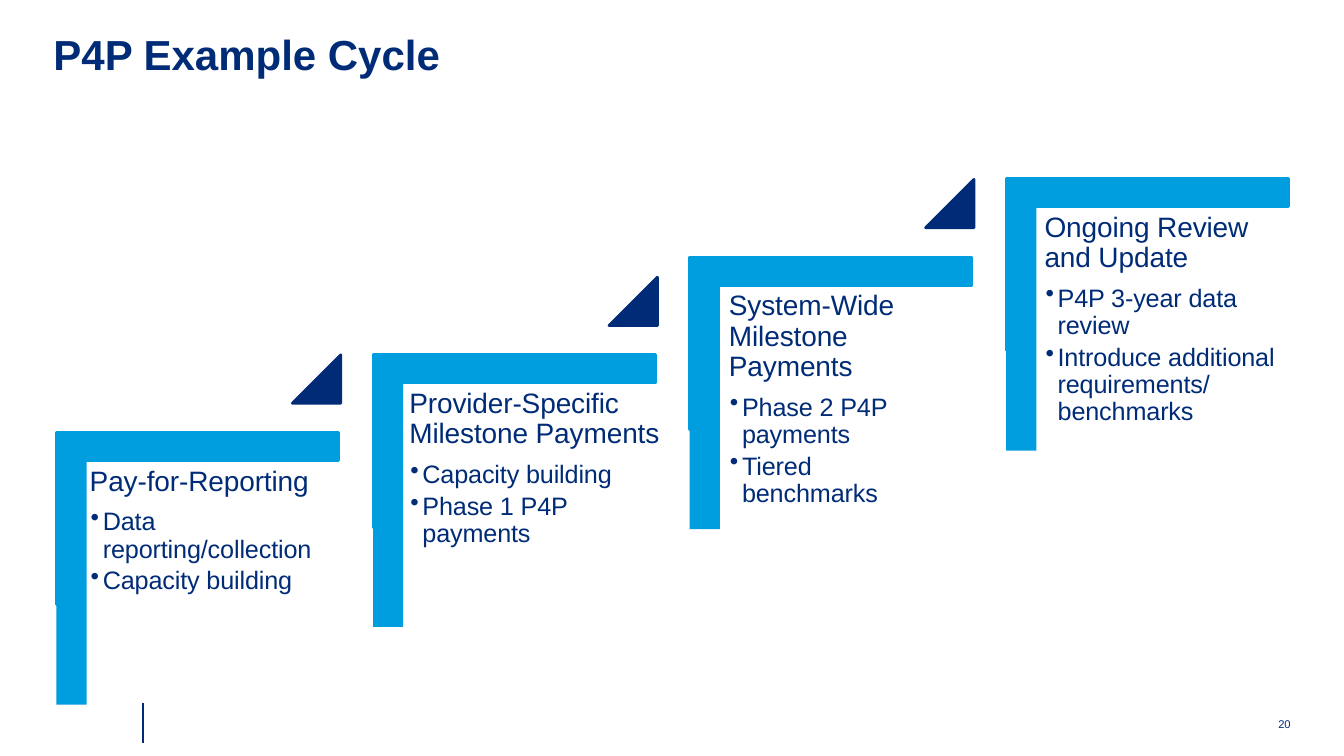
from lxml.etree import SubElement
from pptx import Presentation
from pptx.dml.color import RGBColor
from pptx.enum.shapes import MSO_CONNECTOR, MSO_SHAPE
from pptx.oxml.ns import qn
from pptx.util import Inches, Pt

COLORS = {"navy": "002C77", "sky": "009DDF"}
FONT = "Arial"

STEP_LEFT, STEP_PITCH, STEP_WIDTH = 0.56, 3.14, 2.8
BAR_WIDTH, BAR_HEIGHT = 0.3, 2.7
BEAM_HEIGHT, FRAME_HEIGHT = 0.28, 1.71
TRIANGLE_SIZE = 0.48

# Each step: top, text indent from the step, text width, heading, bullets
STEPS = [
    (4.29, 0.33, 2.3, "Pay-for-Reporting",
     ["Data reporting/collection", "Capacity building"]),
    (3.52, 0.36, 2.6, "Provider-Specific Milestone Payments",
     ["Capacity building", "Phase 1 P4P payments"]),
    (2.55, 0.39, 1.9, "System-Wide Milestone Payments",
     ["Phase 2 P4P payments", "Tiered benchmarks"]),
    (1.77, 0.38, 2.42, "Ongoing Review and Update",
     ["P4P 3-year data review", "Introduce additional requirements/ benchmarks"]),
]


def color(name):
    return RGBColor.from_string(COLORS[name])


def paint(shape, name, line_width=None):
    shape.shadow.inherit = False
    shape.fill.solid()
    shape.fill.fore_color.rgb = color(name)
    if line_width:
        shape.line.color.rgb = color(name)
        shape.line.width = Pt(line_width)
    else:
        shape.line.fill.background()


def add_outline(slide, points, name):
    corners = [(Inches(x), Inches(y)) for x, y in points]
    builder = slide.shapes.build_freeform(*corners[0])
    builder.add_line_segments(corners[1:], close=True)
    paint(builder.convert_to_shape(), name, line_width=2)


def add_text_box(slide, left, top, width, height):
    box = slide.shapes.add_textbox(Inches(left), Inches(top), Inches(width), Inches(height))
    frame = box.text_frame
    frame.word_wrap = True
    frame.margin_left = frame.margin_top = frame.margin_right = frame.margin_bottom = 0
    return frame


def write(paragraph, text, size, bold=False, line_spacing=None, space_before=None,
          bullet=False, tracking=-10):
    if line_spacing:
        paragraph.line_spacing = Pt(line_spacing)
    if space_before:
        paragraph.space_before = Pt(space_before)
    if bullet:
        properties = paragraph._p.get_or_add_pPr()
        properties.set("marL", str(Inches(0.13)))
        properties.set("indent", str(-Inches(0.12)))
        SubElement(properties, qn("a:buChar")).set("char", "•")
    run = paragraph.add_run()
    run.text = text
    run.font.name = FONT
    run.font.size = Pt(size)
    run.font.bold = bold
    run.font.color.rgb = color("navy")
    run._r.get_or_add_rPr().set("spc", str(tracking))


def add_title(slide, left, top, width, height):
    frame = add_text_box(slide, left, top, width, height)
    write(frame.paragraphs[0], "P4P Example Cycle", 30, bold=True, tracking=0)


def add_step(slide, left, top, text_indent, text_width, heading, bullets):
    # Bracket: beam with a short leg, then the full-length bar
    right, bottom = left + STEP_WIDTH, top + FRAME_HEIGHT
    inner_left, inner_top = left + BEAM_HEIGHT, top + BEAM_HEIGHT
    add_outline(slide, [(left, top), (right, top), (right, inner_top),
                        (inner_left, inner_top), (inner_left, bottom), (left, bottom)], "sky")
    bar = slide.shapes.add_shape(MSO_SHAPE.RECTANGLE, Inches(left), Inches(top),
                                 Inches(BAR_WIDTH), Inches(BAR_HEIGHT))
    paint(bar, "sky")

    # Heading and bullets
    frame = add_text_box(slide, left + text_indent, top + 0.34, text_width, 1.6)
    write(frame.paragraphs[0], heading, 20, line_spacing=21.6)
    for index, bullet in enumerate(bullets):
        write(frame.add_paragraph(), bullet, 18, line_spacing=19.4,
              space_before=3.4 if index else 8.5, bullet=True)


def add_triangle(slide, left, top):
    right, bottom = left + TRIANGLE_SIZE, top + TRIANGLE_SIZE
    add_outline(slide, [(right, top), (left, bottom), (right, bottom)], "navy")


def add_staircase(slide, left):
    for index, (top, *content) in enumerate(STEPS):
        step_left = left + index * STEP_PITCH
        add_step(slide, step_left, top, *content)
        if index < len(STEPS) - 1:
            add_triangle(slide, step_left + 2.34, top - 0.77)


def add_footer(slide, left, top):
    rule = slide.shapes.add_connector(MSO_CONNECTOR.STRAIGHT, Inches(left), Inches(top),
                                      Inches(left), Inches(top + 0.4))
    rule.line.color.rgb = color("navy")
    rule.line.width = Pt(1)
    SubElement(rule._element.spPr, qn("a:effectLst"))
    frame = add_text_box(slide, left + 11.26, top + 0.15, 0.2, 0.15)
    write(frame.paragraphs[0], "20", 8, tracking=-20)


def main():
    presentation = Presentation()
    presentation.slide_width = Inches(13.33)
    presentation.slide_height = Inches(7.5)
    slide = presentation.slides.add_slide(presentation.slide_layouts[6])
    add_title(slide, 0.53, 0.28, 12.29, 0.9)
    add_staircase(slide, STEP_LEFT)
    add_footer(slide, 1.42, 6.97)
    presentation.save("out.pptx")


if __name__ == "__main__":
    main()
